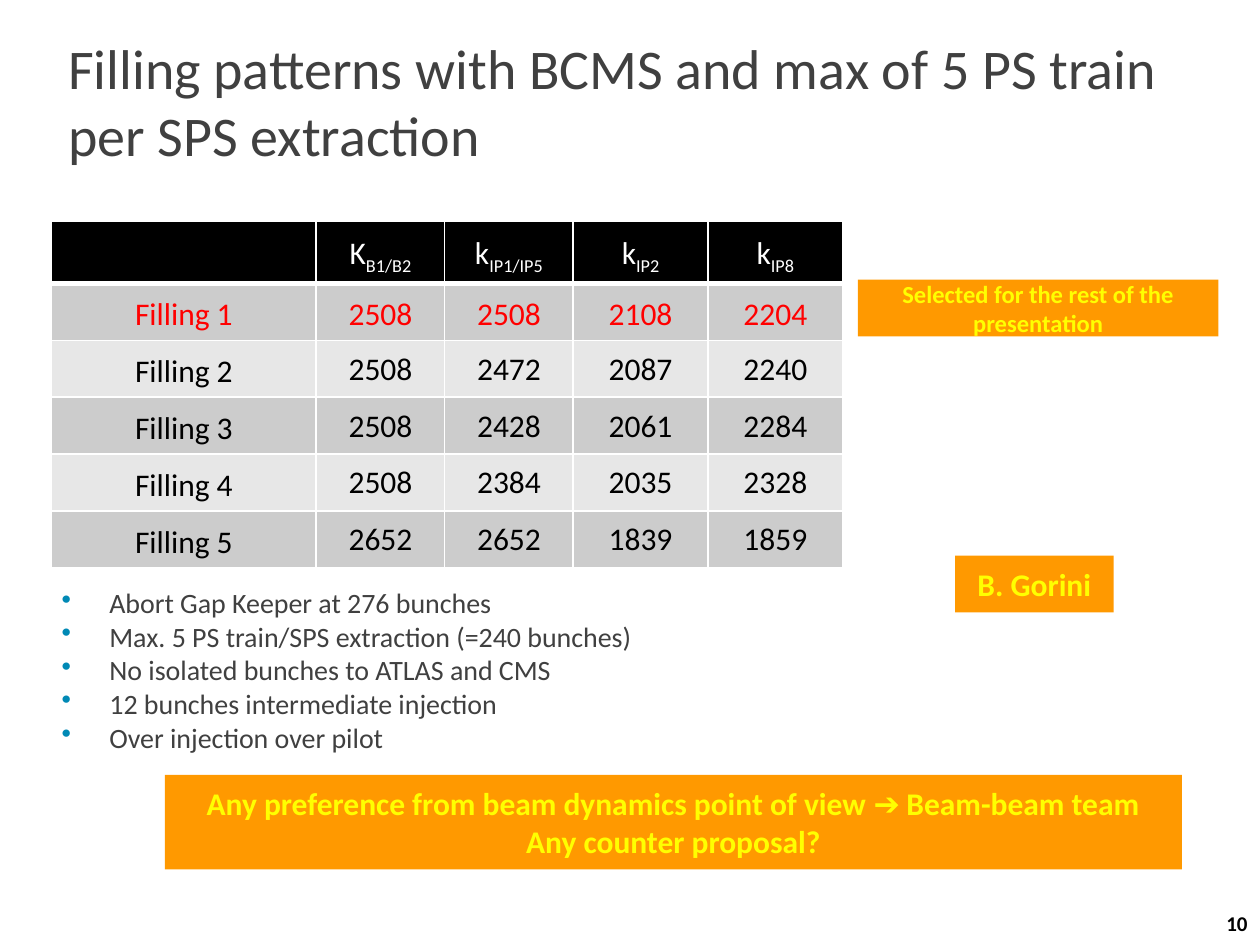
"""Build the slide on filling patterns with BCMS."""
import pptx
import pptx.dml.color
import pptx.enum.shapes
import pptx.enum.text
import pptx.oxml
import pptx.oxml.ns
import pptx.util
from pptx.util import Inches

COLORS = {
    "text": "404040", "black": "000000", "white": "FFFFFF", "red": "FF0000",
    "dark_row": "CCCCCC", "light_row": "E7E7E7", "bullet": "0089B5",
    "orange": "FF9900", "yellow": "FFFF00",
}
HEADERS = [None, ("K", "B1/B2"), ("k", "IP1/IP5"), ("k", "IP2"), ("k", "IP8")]
FILLINGS = [
    (2508, 2508, 2108, 2204),
    (2508, 2472, 2087, 2240),
    (2508, 2428, 2061, 2284),
    (2508, 2384, 2035, 2328),
    (2652, 2652, 1839, 1859),
]
COLUMN_WIDTHS = [2.1, 1.02, 1.02, 1.07, 1.07]
CONDITIONS = [
    "Abort Gap Keeper at 276 bunches",
    "Max. 5 PS train/SPS extraction (=240 bunches)",
    "No isolated bunches to ATLAS and CMS",
    "12 bunches intermediate injection",
    "Over injection over pilot",
]
ALIGN = pptx.enum.text.PP_ALIGN
ANCHOR = pptx.enum.text.MSO_ANCHOR


def rgb(name):
    return pptx.dml.color.RGBColor.from_string(COLORS[name])


def xml(tag, content):
    return pptx.oxml.parse_xml(f"<a:{tag} {pptx.oxml.ns.nsdecls('a')} {content}")


class SlideBuilder:
    """Holds the text style and the current slide."""

    font = "Calibri"

    def __init__(self, prs):
        self.slide = prs.slides.add_slide(prs.slide_layouts[5])

    def format(self, p, size, color, bold=False, align=ALIGN.LEFT):
        p.alignment = align
        for r in p.runs:
            r.font.name = self.font
            r.font.size = pptx.util.Pt(size)
            r.font.bold = bold
            r.font.color.rgb = rgb(color)

    def margins(self, frame, side, top, bottom):
        frame.margin_left = frame.margin_right = Inches(side)
        frame.margin_top, frame.margin_bottom = Inches(top), Inches(bottom)

    def title(self, text, box):
        sp = self.slide.shapes.title
        sp.left, sp.top, sp.width, sp.height = map(Inches, box)
        tf = sp.text_frame
        tf.text = text
        tf.vertical_anchor = ANCHOR.MIDDLE
        self.margins(tf, 0.04, 0, 0)
        self.format(tf.paragraphs[0], 32, "text")

    def text(self, lines, box, size, color, bold=False, align=ALIGN.LEFT,
             anchor=ANCHOR.TOP, bullets=False):
        tf = self.slide.shapes.add_textbox(*map(Inches, box)).text_frame
        tf.word_wrap = True
        tf.vertical_anchor = anchor
        self.margins(tf, 0.1, 0, 0)
        tf.text = "\n".join(lines)
        for p in tf.paragraphs:
            if bullets:
                pPr = p._p.get_or_add_pPr()
                pPr.set("marL", str(Inches(0.57)))
                pPr.set("indent", str(Inches(-0.38)))
                pPr.append(xml("buClr", f'><a:srgbClr val="{COLORS["bullet"]}"/></a:buClr>'))
                pPr.append(xml("buChar", 'char="•"/>'))
            self.format(p, size, color, bold, align)

    def callout(self, lines, box, size=18):
        sp = self.slide.shapes.add_shape(
            pptx.enum.shapes.MSO_SHAPE.RECTANGLE, *map(Inches, box))
        sp.shadow.inherit = False
        sp.fill.solid()
        sp.fill.fore_color.rgb = rgb("orange")
        sp.line.fill.background()
        tf = sp.text_frame
        tf.word_wrap = True
        tf.vertical_anchor = ANCHOR.MIDDLE
        tf.text = "\n".join(lines)
        for p in tf.paragraphs:
            self.format(p, size, "yellow", True, ALIGN.CENTER)

    def cell(self, cell, parts, fill, color, borders, compact=False):
        tcPr = cell._tc.get_or_add_tcPr()
        for side, width in borders.items():
            tcPr.append(xml(
                f"ln{side}", f'w="{pptx.util.Pt(width)}"><a:solidFill>'
                f'<a:srgbClr val="{COLORS["white"]}"/></a:solidFill></a:ln{side}>'))
        cell.fill.solid()
        cell.fill.fore_color.rgb = rgb(fill)
        if compact:
            self.margins(cell, 0.01, 0.01, 0)
        else:
            self.margins(cell, 0.04, 0.05, 0.05)
        p = cell.text_frame.paragraphs[0]
        if not compact:
            p.line_spacing = 1.15
        for part in parts:
            p.add_run().text = part
        self.format(p, 18, color, align=ALIGN.CENTER)
        for r in p.runs[1:]:
            r._r.get_or_add_rPr().set("baseline", "-25000")

    def table(self, headers, rows, widths, box):
        table = self.slide.shapes.add_table(
            len(rows) + 1, len(headers), *map(Inches, box)).table
        for column, width in zip(table.columns, widths):
            column.width = Inches(width)
        for col, parts in enumerate(headers):
            self.cell(table.cell(0, col), parts or (), "black", "white",
                      {"L": 1, "R": 1, "T": 1, "B": 3})
        for row, values in enumerate(rows, 1):
            fill = "dark_row" if row % 2 else "light_row"
            color = "red" if row == 1 else "black"
            for col, value in enumerate((f"Filling {row}", *values)):
                cell = table.cell(row, col)
                cell.vertical_anchor = ANCHOR.MIDDLE
                self.cell(cell, [str(value)], fill, color,
                          {"L": 1, "R": 1, "B": 1}, compact=row > 1 and col > 0)


def main():
    prs = pptx.Presentation()
    prs.slide_width, prs.slide_height = Inches(10), Inches(7.5)
    s = SlideBuilder(prs)
    s.title("Filling patterns with BCMS and max of 5 PS train per SPS extraction",
            (0.5, 0.3, 9, 1))
    s.table(HEADERS, FILLINGS, COLUMN_WIDTHS, (0.41, 1.76, 6.28, 2.67))
    s.text(["10"], (9.5, 7.15, 0.5, 0.35), 12, "black", True, ALIGN.RIGHT, ANCHOR.MIDDLE)
    s.text(CONDITIONS, (0.2, 4.65, 9.8, 1.5), 16, "text", bullets=True)
    s.callout(["B. Gorini"], (7.58, 4.41, 1.26, 0.45))
    s.callout(["Any preference from beam dynamics point of view ➔ Beam-beam team",
               "Any counter proposal?"], (1.31, 6.15, 8.07, 0.75))
    s.callout(["Selected for the rest of the presentation"], (6.81, 2.22, 2.86, 0.45), 14)
    prs.save("out.pptx")


if __name__ == "__main__":
    main()
